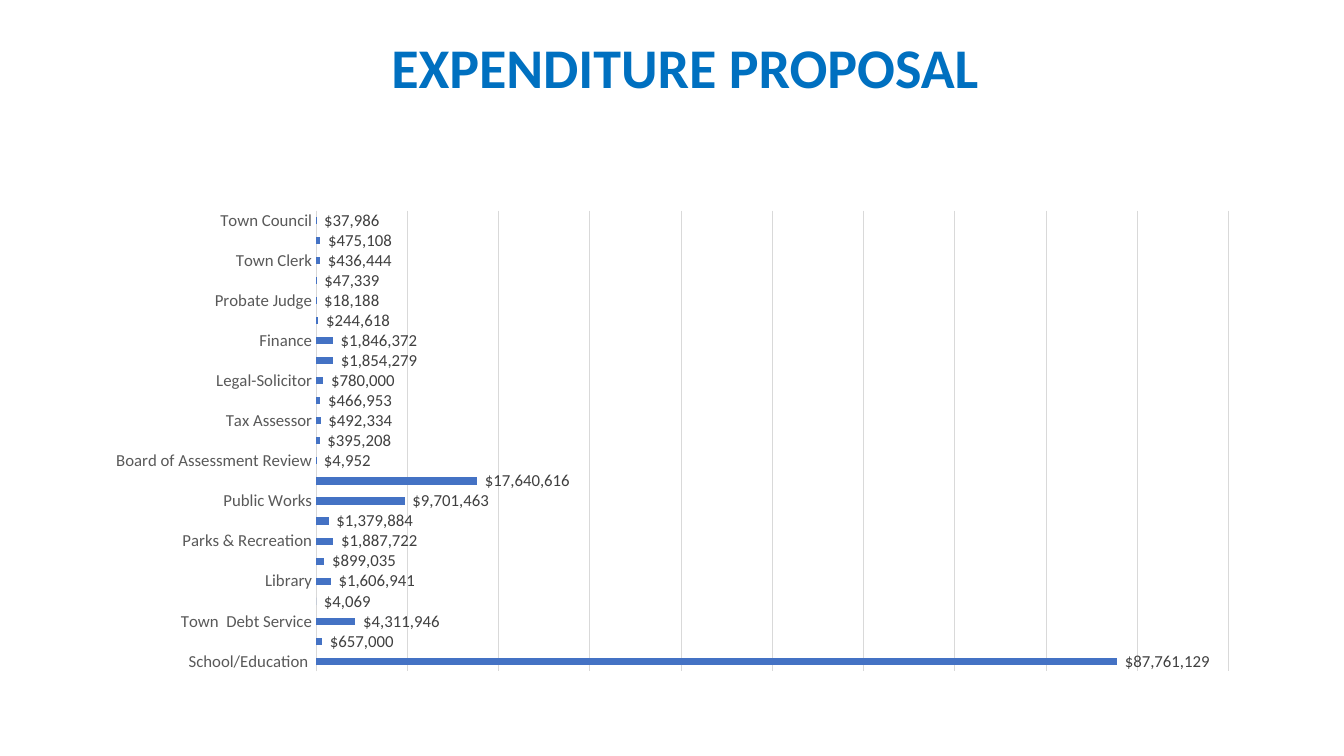
from pptx import Presentation
from pptx.chart.data import CategoryChartData
from pptx.dml.color import RGBColor
from pptx.enum.chart import XL_CHART_TYPE, XL_LABEL_POSITION, XL_TICK_LABEL_POSITION, XL_TICK_MARK
from pptx.enum.text import MSO_ANCHOR, MSO_AUTO_SIZE, PP_ALIGN
from pptx.util import Emu, Pt

BAR = XL_CHART_TYPE.BAR_CLUSTERED
OUTSIDE_END = XL_LABEL_POSITION.OUTSIDE_END
NEXT_TO_AXIS = XL_TICK_LABEL_POSITION.NEXT_TO_AXIS
NO_TICK = XL_TICK_MARK.NONE
MIDDLE = MSO_ANCHOR.MIDDLE
NO_FIT = MSO_AUTO_SIZE.NONE
CENTER = PP_ALIGN.CENTER

TITLE_BLUE = RGBColor(0x00, 0x70, 0xC0)
BAR_BLUE = RGBColor(0x44, 0x72, 0xC4)
GRID_GRAY = RGBColor(0xD9, 0xD9, 0xD9)
AXIS_GRAY = RGBColor(0x59, 0x59, 0x59)
LABEL_GRAY = RGBColor(0x40, 0x40, 0x40)
FONT = "Calibri"
PX_PER_INCH = 100.8

# Every other bar has no department label
EXPENDITURES = [
    ("Town Council", 37986),
    ("", 475108),
    ("Town Clerk", 436444),
    ("", 47339),
    ("Probate Judge", 18188),
    ("", 244618),
    ("Finance", 1846372),
    ("", 1854279),
    ("Legal-Solicitor", 780000),
    ("", 466953),
    ("Tax Assessor", 492334),
    ("", 395208),
    ("Board of Assessment Review", 4952),
    ("", 17640616),
    ("Public Works", 9701463),
    ("", 1379884),
    ("Parks & Recreation", 1887722),
    ("", 899035),
    ("Library", 1606941),
    ("", 4069),
    ("Town  Debt Service", 4311946),
    ("", 657000),
    ("School/Education ", 87761129),
]


def px(*lengths):
    return [Emu(round(n * 914400 / PX_PER_INCH)) for n in lengths]


def set_font(font, size, color):
    font.name = FONT
    font.size = Pt(size)
    font.color.rgb = color


prs = Presentation()
prs.slide_width, prs.slide_height = px(1344, 756)
s = prs.slides.add_slide(prs.slide_layouts[5])

# Title
title = s.shapes.title
title.left, title.top, title.width, title.height = px(118, 40, 1134, 61)
tf = title.text_frame
tf.auto_size = NO_FIT
tf.word_wrap = True
tf.vertical_anchor = MIDDLE
p = tf.paragraphs[0]
p.alignment = CENTER
p.line_spacing = 0.9
r = p.add_run()
r.text = "EXPENDITURE PROPOSAL"
r.font.bold = True
set_font(r.font, 40, TITLE_BLUE)

# Chart
data = CategoryChartData()
data.categories = [name for name, amount in EXPENDITURES]
data.add_series("Series 1", [amount for name, amount in EXPENDITURES])
chart = s.shapes.add_chart(BAR, *px(93, 201, 1159, 480), data).chart
chart.has_legend = False
chart.has_title = False
chart.font.name = FONT
chart.font.size = Pt(10)

# Axes
departments = chart.category_axis
departments.reverse_order = True
departments.major_tick_mark = NO_TICK
departments.minor_tick_mark = NO_TICK
departments.tick_label_position = NEXT_TO_AXIS
departments.format.line.color.rgb = GRID_GRAY
departments.format.line.width = Pt(0.75)
set_font(departments.tick_labels.font, 12, AXIS_GRAY)

dollars = chart.value_axis
dollars.visible = False
dollars.major_tick_mark = NO_TICK
dollars.minor_tick_mark = NO_TICK
dollars.minimum_scale = 0
dollars.maximum_scale = 100000000
dollars.major_unit = 10000000
dollars.has_major_gridlines = True
dollars.major_gridlines.format.line.color.rgb = GRID_GRAY
dollars.major_gridlines.format.line.width = Pt(0.75)

# Bars and their amounts
plot = chart.plots[0]
plot.gap_width = 182
plot.vary_by_categories = False
bars = plot.series[0]
bars.format.fill.solid()
bars.format.fill.fore_color.rgb = BAR_BLUE
labels = bars.data_labels
labels.show_value = True
labels.position = OUTSIDE_END
labels.number_format = '_("$"* #,##0_);_("$"* \\(#,##0\\);_("$"* "-"_);_(@_)'
labels.number_format_is_linked = False
set_font(labels.font, 12, LABEL_GRAY)

prs.save("out.pptx")
